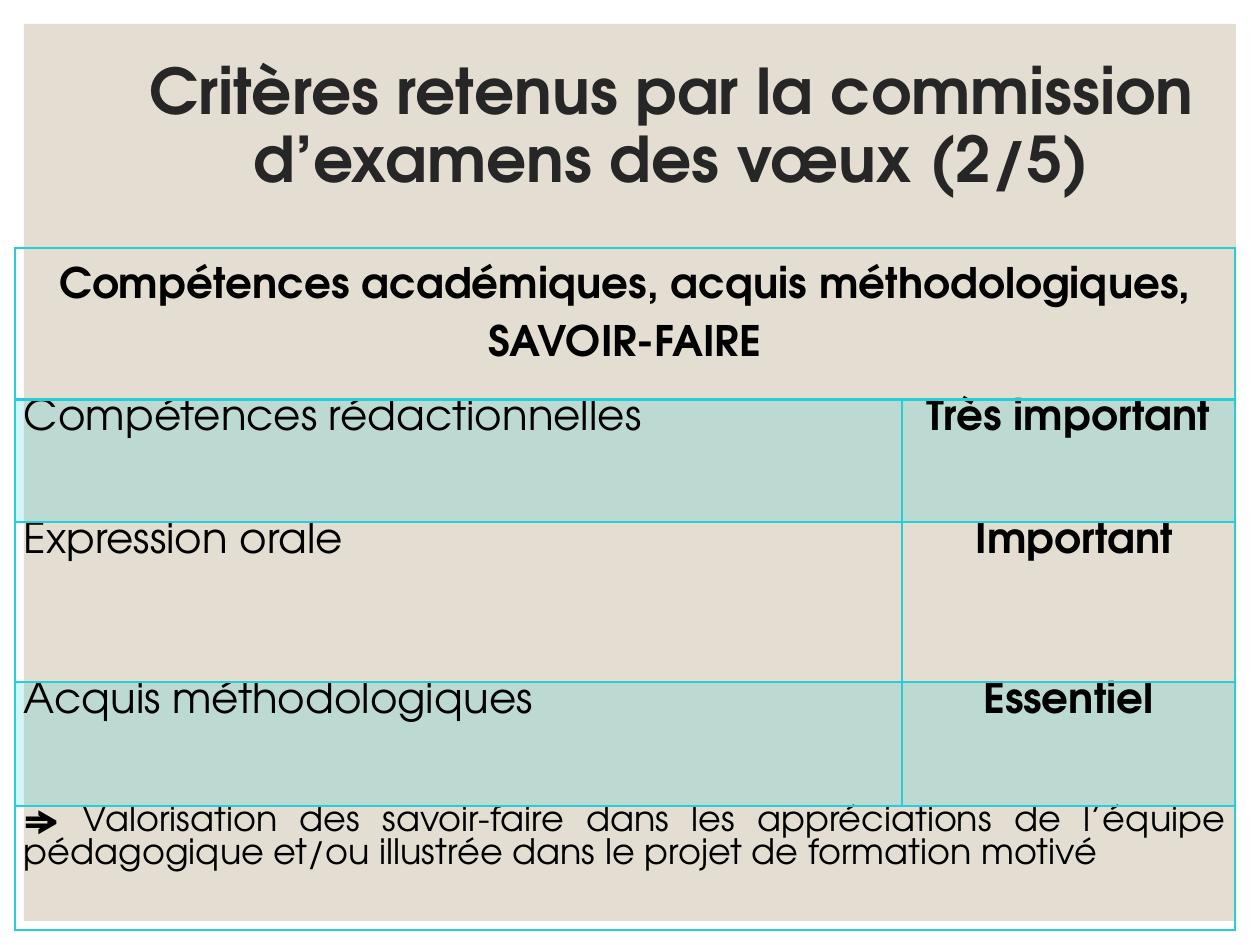
from pptx import Presentation
from pptx.dml.color import RGBColor
from pptx.enum.shapes import MSO_SHAPE
from pptx.enum.text import MSO_ANCHOR, PP_ALIGN
from pptx.oxml import parse_xml
from pptx.oxml.ns import nsdecls
from pptx.util import Pt

EMU_PER_PX = 914400 // 126
COLORS = {"panel": "E3DED1", "title": "262626", "text": "000000", "accent": "27CED7"}
FONT = "TeX Gyre Adventor"
COLUMN_WIDTHS = [887, 333]
ROW_HEIGHTS = [150, 123, 160, 124, 124]
SKILLS = [
    ("Compétences rédactionnelles", "Très important"),
    ("Expression orale", "\u00a0Important"),
    ("Acquis méthodologiques", "Essentiel"),
]


def px(length):
    return length * EMU_PER_PX


class SlideBuilder:
    """Holds the style and the current slide."""

    def __init__(self, presentation):
        self.slide = presentation.slides.add_slide(presentation.slide_layouts[6])

    def panel(self, *box):
        shape = self.slide.shapes.add_shape(MSO_SHAPE.RECTANGLE, *map(px, box))
        shape.shadow.inherit = False
        shape.fill.solid()
        shape.fill.fore_color.rgb = RGBColor.from_string(COLORS["panel"])
        shape.line.fill.background()

    def paragraph(self, paragraph, runs, color="text", **layout):
        """Fill a paragraph with (text, size, bold) runs."""
        for name, value in layout.items():
            setattr(paragraph, name, value)
        for text, size, bold in runs:
            run = paragraph.add_run()
            run.text = text
            for name, value in {"name": FONT, "size": Pt(size), "bold": bold}.items():
                setattr(run.font, name, value)
            run.font.color.rgb = RGBColor.from_string(COLORS[color])

    def title(self, text, *box):
        frame = self.slide.shapes.add_textbox(*map(px, box)).text_frame
        frame.word_wrap = True
        frame.vertical_anchor = MSO_ANCHOR.MIDDLE
        self.paragraph(frame.paragraphs[0], [(text, 36, True)], "title",
                       alignment=PP_ALIGN.CENTER, line_spacing=0.9)

    def table(self, left, top):
        frame = self.slide.shapes.add_table(
            len(ROW_HEIGHTS), len(COLUMN_WIDTHS), px(left), px(top),
            px(sum(COLUMN_WIDTHS)), px(sum(ROW_HEIGHTS)))
        table = frame.table
        table.first_row = table.horz_banding = False
        for column, width in zip(table.columns, COLUMN_WIDTHS):
            column.width = px(width)
        for row, height in zip(table.rows, ROW_HEIGHTS):
            row.height = px(height)
        for index, row in enumerate(table.rows):
            for cell in row.cells:
                self.style_cell(cell, index)
        for index in (0, len(ROW_HEIGHTS) - 1):
            table.cell(index, 0).merge(table.cell(index, 1))
        return table

    def style_cell(self, cell, row_index):
        margins = {"margin_left": 9, "margin_right": 9, "margin_top": 0, "margin_bottom": 0}
        for name, value in margins.items():
            setattr(cell, name, px(value))
        properties = cell._tc.get_or_add_tcPr()
        color = f'<a:srgbClr val="{COLORS["accent"]}"/>'
        for side in "LRTB":
            on_header_edge = (row_index, side) in ((0, "B"), (1, "T"))
            width = Pt(2 if on_header_edge else 1)
            properties.append(parse_xml(
                f'<a:ln{side} {nsdecls("a")} w="{width}">'
                f'<a:solidFill>{color}</a:solidFill></a:ln{side}>'))
        if row_index % 2:
            tint = color.replace("/>", '><a:alpha val="20000"/></a:srgbClr>')
            properties.append(parse_xml(
                f'<a:solidFill {nsdecls("a")}>{tint}</a:solidFill>'))
        else:
            properties.append(parse_xml(f'<a:noFill {nsdecls("a")}/>'))


def main():
    presentation = Presentation()
    presentation.slide_width, presentation.slide_height = px(1260), px(945)
    builder = SlideBuilder(presentation)
    builder.panel(24, 24, 1212, 897)
    builder.title("Critères retenus par la commission d’examens des vœux (2/5)",
                  131, 32, 1081, 193)
    table = builder.table(15, 248)
    builder.paragraph(
        table.cell(0, 0).text_frame.paragraphs[0],
        [("Compétences académiques, acquis méthodologiques, SAVOIR-FAIRE", 24, True)],
        alignment=PP_ALIGN.CENTER, line_spacing=1.5)
    for row, skill in enumerate(SKILLS, start=1):
        for column, text in enumerate(skill):
            paragraph = table.cell(row, column).text_frame.paragraphs[0]
            if row == 2:
                paragraph.space_before = Pt(22)
            builder.paragraph(paragraph, [(text, 24, column == 1)],
                              alignment=PP_ALIGN.CENTER if column else PP_ALIGN.LEFT)
    builder.paragraph(
        table.cell(4, 0).text_frame.paragraphs[0],
        [("⇒ ", 20, True),
         ("Valorisation des savoir-faire dans les appréciations de l’équipe "
          "pédagogique et/ou illustrée dans le projet de formation motivé", 20, False)],
        alignment=PP_ALIGN.JUSTIFY)
    presentation.save("out.pptx")


if __name__ == "__main__":
    main()
